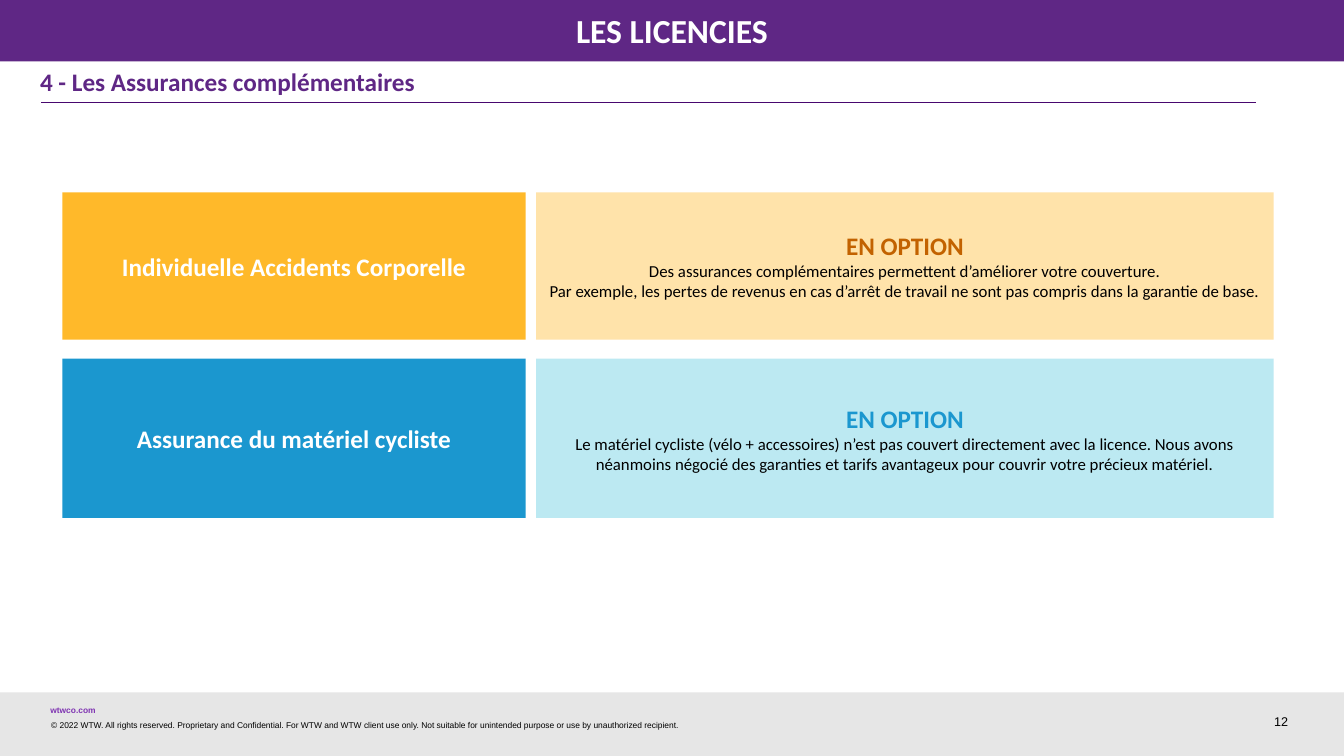
from dataclasses import dataclass

from lxml import etree
from pptx import Presentation
from pptx.dml.color import RGBColor
from pptx.enum.shapes import MSO_CONNECTOR, MSO_SHAPE
from pptx.enum.text import MSO_ANCHOR, PP_ALIGN
from pptx.oxml.ns import qn
from pptx.slide import Slide
from pptx.util import Cm, Pt

RECT, LINE = MSO_SHAPE.RECTANGLE, MSO_CONNECTOR.STRAIGHT
TOP, MIDDLE, BOTTOM = MSO_ANCHOR.TOP, MSO_ANCHOR.MIDDLE, MSO_ANCHOR.BOTTOM
LEFT, CENTER, RIGHT = PP_ALIGN.LEFT, PP_ALIGN.CENTER, PP_ALIGN.RIGHT

WHITE = RGBColor(0xFF, 0xFF, 0xFF)
BLACK = RGBColor(0x00, 0x00, 0x00)
GREY = RGBColor(0xE6, 0xE6, 0xE6)
PURPLE = RGBColor(0x5F, 0x27, 0x85)
VIOLET = RGBColor(0x7F, 0x34, 0xB2)
PLUM = RGBColor(0x48, 0x08, 0x6F)
AMBER = RGBColor(0xFF, 0xB9, 0x2A)
CREAM = RGBColor(0xFF, 0xE3, 0xAA)
RUST = RGBColor(0xC2, 0x62, 0x00)
BLUE = RGBColor(0x1B, 0x97, 0xCF)
PALE = RGBColor(0xBC, 0xE9, 0xF2)

WIDE, HIGH = 33.87, 19.05
SIDES = ("margin_left", "margin_top", "margin_right", "margin_bottom")
INSET = (0.25, 0.13, 0.25, 0.13)
EVEN = (0.25,) * 4
NONE = (0,) * 4


@dataclass
class Para:
    text: str
    size: float
    color: RGBColor
    bold: bool = False
    name: str = "Calibri"
    after: float = 0


@dataclass
class Box:
    place: tuple[float, float, float, float]
    paras: list[Para]
    fill: RGBColor | None = None
    align: PP_ALIGN = LEFT
    anchor: MSO_ANCHOR = TOP
    inset: tuple[float, ...] = INSET


@dataclass
class Offer:
    top: float
    height: float
    label: str
    lines: list[str]
    dark: RGBColor
    light: RGBColor
    accent: RGBColor


def draw_box(slide: Slide, box: Box) -> None:
    place = [Cm(v) for v in box.place]
    if box.fill is None:
        shape = slide.shapes.add_textbox(*place)
    else:
        shape = slide.shapes.add_shape(RECT, *place)
        shape.shadow.inherit = False
        shape.fill.solid()
        shape.fill.fore_color.rgb = box.fill
        shape.line.fill.background()
    frame = shape.text_frame
    form = {"word_wrap": True, "vertical_anchor": box.anchor}
    form |= {side: Cm(v) for side, v in zip(SIDES, box.inset)}
    for key, value in form.items():
        setattr(frame, key, value)
    for i, para in enumerate(box.paras):
        item = frame.add_paragraph() if i else frame.paragraphs[0]
        item.text = para.text
        item.alignment = box.align
        item.space_after = Pt(para.after)
        font = item.runs[0].font
        looks = {"name": para.name, "size": Pt(para.size), "bold": para.bold}
        for key, value in looks.items():
            setattr(font, key, value)
        font.color.rgb = para.color


def draw_rule(slide: Slide, left: float, right: float, y: float) -> None:
    rule = slide.shapes.add_connector(LINE, Cm(left), Cm(y), Cm(right), Cm(y))
    rule.line.color.rgb = PLUM
    rule.line.width = Pt(1)
    etree.SubElement(rule._element.spPr, qn("a:effectLst"))


def draw_offer(slide: Slide, offer: Offer) -> None:
    label = [Para(offer.label, 18, WHITE, True)]
    detail = [Para("EN OPTION", 18, offer.accent, True)]
    detail += [Para(line, 12, BLACK) for line in offer.lines]
    for left, width, paras, fill in (
        (1.57, 11.68, label, offer.dark),
        (13.51, 18.59, detail, offer.light),
    ):
        place = (left, offer.top, width, offer.height)
        draw_box(slide, Box(place, paras, fill, CENTER, MIDDLE))


FRAME = [
    # Footer
    Box((0, 17.45, WIDE, 1.6), [], GREY),
    Box((1.27, 17.78, 1.14, 0.25),
        [Para("wtwco.com", 6, VIOLET, True, "Arial", 2)], inset=NONE),
    Box((1.29, 18.14, 16.51, 0.25),
        [Para("© 2022 WTW. All rights reserved. Proprietary and Confidential. "
              "For WTW and WTW client use only. Not suitable for unintended "
              "purpose or use by unauthorized recipient.",
              6, BLACK, name="Arial")], inset=NONE),
    Box((31.6, 17.78, 0.86, 0.58), [Para("12", 9, BLACK, name="Arial")],
        align=RIGHT, anchor=BOTTOM, inset=NONE),
    # Headings
    Box((0, 0, WIDE, 1.55), [Para("LES LICENCIES", 24, WHITE, True, after=6)],
        PURPLE, CENTER, inset=EVEN),
    Box((0.76, 1.55, 27.84, 1.02),
        [Para("4 - Les Assurances complémentaires", 18, PURPLE, True)]),
]

OFFERS = [
    Offer(4.85, 3.71, "Individuelle Accidents Corporelle",
          ["Des assurances complémentaires permettent d’améliorer votre "
           "couverture.",
           "Par exemple, les pertes de revenus en cas d’arrêt de travail ne "
           "sont pas compris dans la garantie de base."],
          AMBER, CREAM, RUST),
    Offer(9.04, 4.01, "Assurance du matériel cycliste",
          ["Le matériel cycliste (vélo + accessoires) n’est pas couvert "
           "directement avec la licence. Nous avons néanmoins négocié des "
           "garanties et tarifs avantageux pour couvrir votre précieux "
           "matériel."],
          BLUE, PALE, BLUE),
]


def main() -> None:
    deck = Presentation()
    deck.slide_width, deck.slide_height = Cm(WIDE), Cm(HIGH)
    slide = deck.slides.add_slide(deck.slide_layouts[6])
    for box in FRAME:
        draw_box(slide, box)
    draw_rule(slide, 1.04, 31.65, 2.59)
    for offer in OFFERS:
        draw_offer(slide, offer)
    deck.save("out.pptx")


if __name__ == "__main__":
    main()
